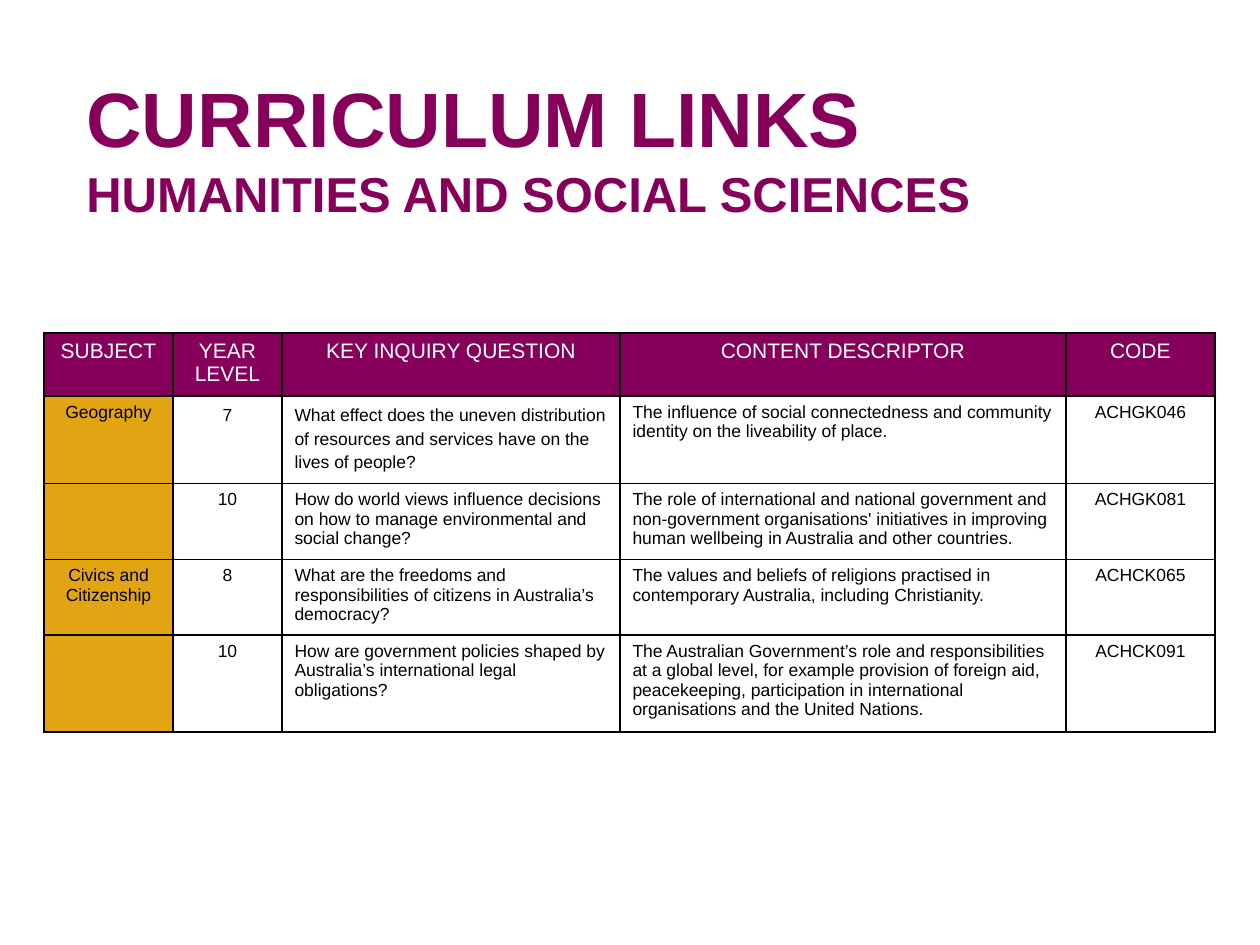
from lxml.etree import SubElement
from pptx import Presentation
from pptx.dml.color import RGBColor
from pptx.enum.text import MSO_ANCHOR, PP_ALIGN
from pptx.oxml.ns import qn
from pptx.util import Pt

PX = 914400 // 126
PLUM = RGBColor(0x86, 0x00, 0x5B)
GOLD = RGBColor(0xE3, 0xA4, 0x13)
WHITE = RGBColor(0xFF, 0xFF, 0xFF)
BLACK = RGBColor(0x00, 0x00, 0x00)

COLUMN_WIDTHS = [129, 109, 338, 446, 149]
ROW_HEIGHTS = [60, 82, 72, 71, 91]
CENTRED_COLUMNS = (0, 1, 4)
ROWS = [
    ("SUBJECT", "YEAR LEVEL", "KEY INQUIRY QUESTION", "CONTENT DESCRIPTOR", "CODE"),
    ("Geography", "7",
     "What effect does the uneven distribution of resources and services have on "
     "the lives of people?",
     "The influence of social connectedness and community identity on "
     "the liveability of place.",
     "ACHGK046"),
    ("", "10",
     "How do world views influence decisions on how to manage environmental and "
     "social change?",
     "The role of international and national government and non-government "
     "organisations' initiatives in improving human wellbeing in Australia and "
     "other countries.",
     "ACHGK081"),
    ("Civics and Citizenship", "8",
     "What are the freedoms and responsibilities of citizens in Australia’s democracy?",
     "The values and beliefs of religions practised in contemporary Australia, "
     "including Christianity.",
     "ACHCK065"),
    ("", "10",
     "How are government policies shaped by Australia’s international legal obligations?",
     "The Australian Government’s role and responsibilities at a global level, for "
     "example provision of foreign aid, peacekeeping, participation in international "
     "organisations and the United Nations.",
     "ACHCK091"),
]


def add_borders(cell):
    properties = cell._tc.get_or_add_tcPr()
    for side in ("a:lnL", "a:lnR", "a:lnT", "a:lnB"):
        line = SubElement(properties, qn(side), w=str(Pt(1)))
        fill = SubElement(line, qn("a:solidFill"))
        SubElement(fill, qn("a:srgbClr"), val=str(BLACK))


deck = Presentation()
deck.slide_width = 1260 * PX
deck.slide_height = 945 * PX
page = deck.slides.add_slide(deck.slide_layouts[6])

# Title
title = page.shapes.add_textbox(74 * PX, 57 * PX, 1096 * PX, 157 * PX)
frame = title.text_frame
frame.word_wrap = True
frame.vertical_anchor = MSO_ANCHOR.TOP
frame.margin_top = 14 * PX
frame.text = "CURRICULUM LINKS\vHUMANITIES AND SOCIAL SCIENCES"
for span, size in zip(frame.paragraphs[0].runs, (44, 28)):
    span.font.name = "Arial"
    span.font.size = Pt(size)
    span.font.bold = True
    span.font.color.rgb = PLUM

# Curriculum table
table = page.shapes.add_table(
    len(ROWS), len(COLUMN_WIDTHS), 44 * PX, 333 * PX,
    sum(COLUMN_WIDTHS) * PX, sum(ROW_HEIGHTS) * PX).table
table.first_row = False
table.horz_banding = False
for column, width in zip(table.columns, COLUMN_WIDTHS):
    column.width = width * PX
for row, height in zip(table.rows, ROW_HEIGHTS):
    row.height = height * PX

for row_index, texts in enumerate(ROWS):
    is_header = row_index == 0
    for column_index, text in enumerate(texts):
        cell = table.cell(row_index, column_index)
        add_borders(cell)
        if is_header or column_index == 0:
            cell.fill.solid()
            cell.fill.fore_color.rgb = PLUM if is_header else GOLD
        else:
            cell.fill.background()
        cell.text_frame.text = text
        para = cell.text_frame.paragraphs[0]
        if is_header or column_index in CENTRED_COLUMNS:
            para.alignment = PP_ALIGN.CENTER
        if row_index == 1 and column_index in (1, 2):
            para.line_spacing = 1.19
            para.space_after = Pt(6)
        for span in para.runs:
            span.font.name = "Arial"
            span.font.size = Pt(12 if is_header else 10)
            span.font.bold = False
            span.font.color.rgb = WHITE if is_header else BLACK

deck.save("out.pptx")
